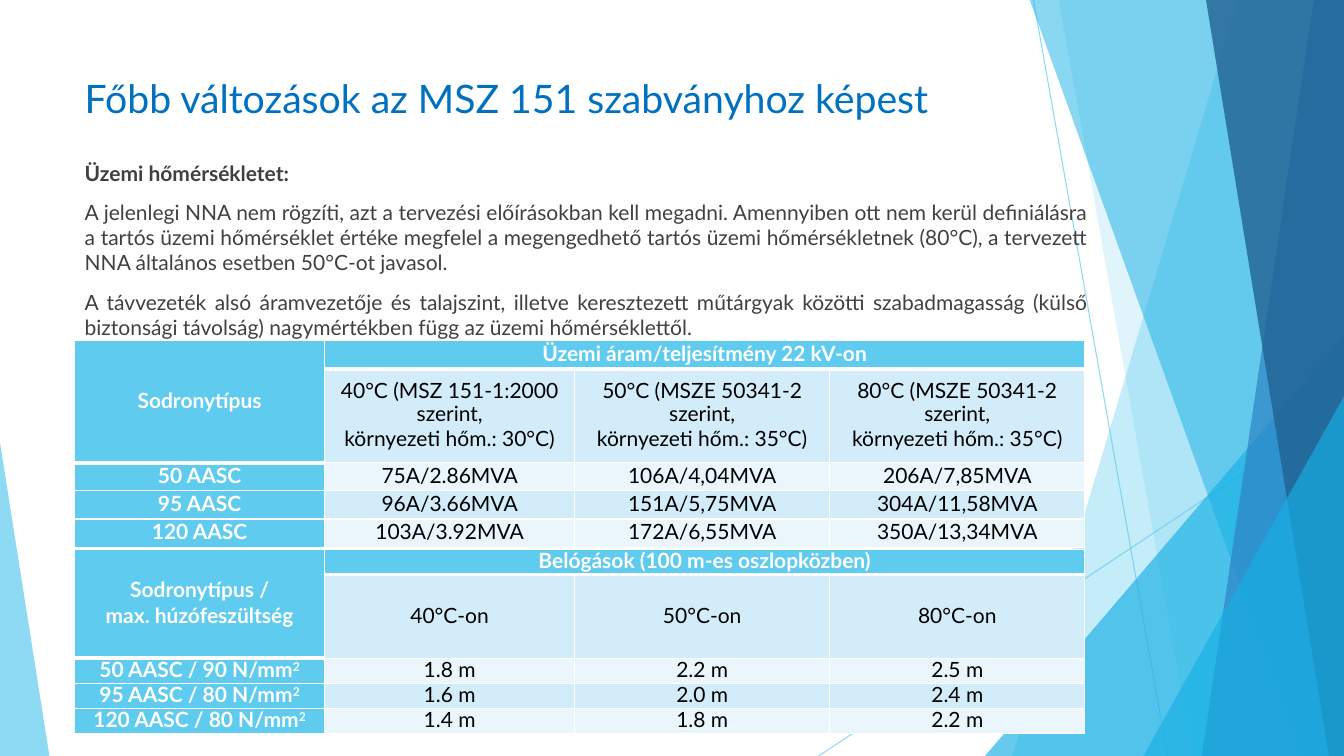
from dataclasses import dataclass

from lxml.etree import SubElement
from pptx import Presentation
from pptx.dml.color import RGBColor
from pptx.enum.shapes import MSO_CONNECTOR, MSO_SHAPE
from pptx.enum.text import MSO_ANCHOR, MSO_AUTO_SIZE, PP_ALIGN
from pptx.oxml.ns import qn
from pptx.util import Inches, Pt


@dataclass(frozen=True)
class Theme:
    font: str = "Lato"
    title_size: int = 28
    text_size: int = 15
    title: str = "0070C0"
    body: str = "404040"
    cell_text: str = "000000"
    white: str = "FFFFFF"
    sky: str = "5FCBEF"
    cyan: str = "17B0E4"
    blue: str = "2E83C3"
    navy: str = "226292"
    band_dark: str = "D2ECF9"
    band_light: str = "EAF6FC"


WIDTH, HEIGHT = 13.33, 7.5
COLUMN_WIDTHS = (2.48, 2.48, 2.53, 2.53)
TABLE_LEFT = 0.74

BODY = (
    "Üzemi hőmérsékletet:",
    "A jelenlegi NNA nem rögzíti, azt a tervezési előírásokban kell megadni. "
    "Amennyiben ott nem kerül definiálásra a tartós üzemi hőmérséklet értéke megfelel "
    "a megengedhető tartós üzemi hőmérsékletnek (80°C), a tervezett NNA általános "
    "esetben 50°C-ot javasol.",
    "A távvezeték alsó áramvezetője és talajszint, illetve keresztezett műtárgyak "
    "közötti szabadmagasság (külső biztonsági távolság) nagymértékben függ az üzemi "
    "hőmérséklettől.",
)

# In cell text, "\n" starts a paragraph and "^" starts a superscript.
CURRENT_ROWS = (
    ("Sodronytípus", "Üzemi áram/teljesítmény 22 kV-on", "", ""),
    ("", "40°C (MSZ 151-1:2000 szerint,\nkörnyezeti hőm.: 30°C)",
     "50°C (MSZE 50341-2 szerint,\nkörnyezeti hőm.: 35°C)",
     "80°C (MSZE 50341-2 szerint,\nkörnyezeti hőm.: 35°C)"),
    ("50 AASC", "75A/2.86MVA", "106A/4,04MVA", "206A/7,85MVA"),
    ("95 AASC", "96A/3.66MVA", "151A/5,75MVA", "304A/11,58MVA"),
    ("120 AASC", "103A/3.92MVA", "172A/6,55MVA", "350A/13,34MVA"),
)
SAG_ROWS = (
    ("Sodronytípus /\nmax. húzófeszültség", "Belógások (100 m-es oszlopközben)", "", ""),
    ("", "40°C-on", "50°C-on", "80°C-on"),
    ("50 AASC / 90 N/mm^2", "1.8 m", "2.2 m", "2.5 m"),
    ("95 AASC / 80 N/mm^2", "1.6 m", "2.0 m", "2.4 m"),
    ("120 AASC / 80 N/mm^2", "1.4 m", "1.8 m", "2.2 m"),
)


class SlideBuilder:
    def __init__(self, slide, theme):
        self.slide = slide
        self.theme = theme

    def set_opacity(self, fill, color, percent):
        """Make the fill solid and partly see-through."""
        fill.solid()
        fill.fore_color.rgb = RGBColor.from_string(color)
        color_element = fill._xPr.find(qn("a:solidFill"))[0]
        SubElement(color_element, qn("a:alpha"), val=str(percent * 1000))

    def add_line(self, start, end):
        line = self.slide.shapes.add_connector(
            MSO_CONNECTOR.STRAIGHT, *(Inches(value) for value in start + end))
        line.line.width = Pt(0.75)
        self.set_opacity(line.line.fill, self.theme.sky, 70)
        SubElement(line._element.spPr, qn("a:effectLst"))

    def add_facet(self, top_x, bottom_x, color, opacity):
        """Fill the area between a slanted edge and the right side of the slide."""
        top = Inches(-0.01)
        right, bottom = Inches(WIDTH), Inches(HEIGHT)
        builder = self.slide.shapes.build_freeform(Inches(top_x), top)
        builder.add_line_segments(
            [(right, top), (right, bottom), (Inches(bottom_x), bottom)], close=True)
        self.finish_shape(builder.convert_to_shape(), color, opacity)

    def add_triangle(self, left, top, width, apex, color, opacity):
        """Stand a right triangle on the bottom of the slide; apex is 0 (left) or 1 (right)."""
        triangle = self.slide.shapes.add_shape(
            MSO_SHAPE.ISOSCELES_TRIANGLE, Inches(left), Inches(top),
            Inches(width), Inches(HEIGHT - top))
        triangle.adjustments[0] = apex
        self.finish_shape(triangle, color, opacity)

    def finish_shape(self, shape, color, opacity):
        shape.shadow.inherit = False
        shape.line.fill.background()
        self.set_opacity(shape.fill, color, opacity)

    def add_run(self, paragraph, text, color, bold=False, size=None):
        run = paragraph.add_run()
        run.text = text
        run.font.name = self.theme.font
        run.font.size = Pt(size or self.theme.text_size)
        run.font.bold = bold
        run.font.color.rgb = RGBColor.from_string(color)
        return run

    def place(self, placeholder, left, top, width, height, anchor):
        """Position a placeholder in front of everything drawn so far."""
        placeholder.left, placeholder.top = Inches(left), Inches(top)
        placeholder.width, placeholder.height = Inches(width), Inches(height)
        self.slide.shapes._spTree.append(placeholder._element)
        frame = placeholder.text_frame
        frame.word_wrap = True
        frame.auto_size = MSO_AUTO_SIZE.NONE
        frame.vertical_anchor = anchor
        return frame

    def add_title(self, text):
        frame = self.place(self.slide.shapes.title, 0.74, 0.67, 9.4, 0.6, MSO_ANCHOR.MIDDLE)
        paragraph = frame.paragraphs[0]
        paragraph.alignment = PP_ALIGN.LEFT
        self.add_run(paragraph, text, self.theme.title, size=self.theme.title_size)

    def add_body(self, texts):
        frame = self.place(self.slide.placeholders[1], 0.74, 1.54, 10.15, 1.71, MSO_ANCHOR.TOP)
        for index, text in enumerate(texts):
            paragraph = frame.add_paragraph() if index else frame.paragraphs[0]
            paragraph.alignment = PP_ALIGN.JUSTIFY
            paragraph.space_before = Pt(10)
            properties = paragraph._p.get_or_add_pPr()
            properties.set("marL", "0")
            properties.set("indent", "0")
            SubElement(properties, qn("a:buNone"))
            self.add_run(paragraph, text, self.theme.body, bold=index == 0)

    def add_table(self, top, row_heights, rows):
        """Add a table with a two-row header and a heading column."""
        table = self.slide.shapes.add_table(
            len(rows), len(COLUMN_WIDTHS), Inches(TABLE_LEFT), Inches(top),
            Inches(sum(COLUMN_WIDTHS)), Inches(sum(row_heights))).table
        for column, width in zip(table.columns, COLUMN_WIDTHS):
            column.width = Inches(width)
        for row, height in zip(table.rows, row_heights):
            row.height = Inches(height)
        for row_index, texts in enumerate(rows):
            band = self.theme.band_dark if row_index % 2 else self.theme.band_light
            for column_index, text in enumerate(texts):
                heading = row_index == 0 or column_index == 0
                thick = row_index == 0 or (row_index, column_index) == (1, 0)
                cell = table.cell(row_index, column_index)
                self.format_cell(cell, self.theme.sky if heading else band, 3 if thick else 1)
                if text:
                    self.fill_cell(cell, text, heading)
        table.cell(0, 0).merge(table.cell(1, 0))
        table.cell(0, 1).merge(table.cell(0, 3))

    def format_cell(self, cell, color, bottom_width):
        cell.margin_left = cell.margin_right = Inches(0.07)
        cell.margin_top = cell.margin_bottom = 0
        cell.vertical_anchor = MSO_ANCHOR.MIDDLE
        properties = cell._tc.get_or_add_tcPr()
        for side, width in (("L", 1), ("R", 1), ("T", 1), ("B", bottom_width)):
            border = SubElement(properties, qn(f"a:ln{side}"), w=str(Pt(width)))
            fill = SubElement(border, qn("a:solidFill"))
            SubElement(fill, qn("a:srgbClr"), val=self.theme.white)
        cell.fill.solid()
        cell.fill.fore_color.rgb = RGBColor.from_string(color)

    def fill_cell(self, cell, text, heading):
        color = self.theme.white if heading else self.theme.cell_text
        for index, line in enumerate(text.split("\n")):
            frame = cell.text_frame
            paragraph = frame.add_paragraph() if index else frame.paragraphs[0]
            paragraph.alignment = PP_ALIGN.CENTER
            paragraph.line_spacing = Pt(16)
            paragraph.space_before = paragraph.space_after = Pt(1)
            base, _, superscript = line.partition("^")
            self.add_run(paragraph, base, color, heading)
            if superscript:
                run = self.add_run(paragraph, superscript, color, heading)
                run.font._element.set("baseline", "30000")


def main():
    presentation = Presentation()
    presentation.slide_width, presentation.slide_height = Inches(WIDTH), Inches(HEIGHT)
    theme = Theme()
    builder = SlideBuilder(presentation.slides.add_slide(presentation.slide_layouts[1]), theme)

    builder.add_line((10.25, 0), (11.58, HEIGHT))
    builder.add_line((WIDTH, 4.03), (8.12, HEIGHT))
    builder.add_facet(12.28, 10.04, theme.sky, 36)
    builder.add_facet(10.5, 11.83, theme.sky, 20)
    builder.add_triangle(9.77, 3.33, 3.56, 1, theme.cyan, 66)
    builder.add_facet(10.21, 12.91, theme.cyan, 50)
    builder.add_facet(13.03, 11.92, theme.blue, 70)
    builder.add_facet(11.96, 13.18, theme.navy, 80)
    builder.add_triangle(11.34, 3.93, 1.99, 1, theme.cyan, 66)
    builder.add_triangle(0, 4.39, 0.49, 0, theme.sky, 70)

    builder.add_title("Főbb változások az MSZ 151 szabványhoz képest")
    builder.add_body(BODY)
    builder.add_table(3.38, (0.28, 0.93, 0.28, 0.28, 0.28), CURRENT_ROWS)
    builder.add_table(5.45, (0.25, 0.83, 0.25, 0.25, 0.25), SAG_ROWS)
    presentation.save("out.pptx")


if __name__ == "__main__":
    main()
